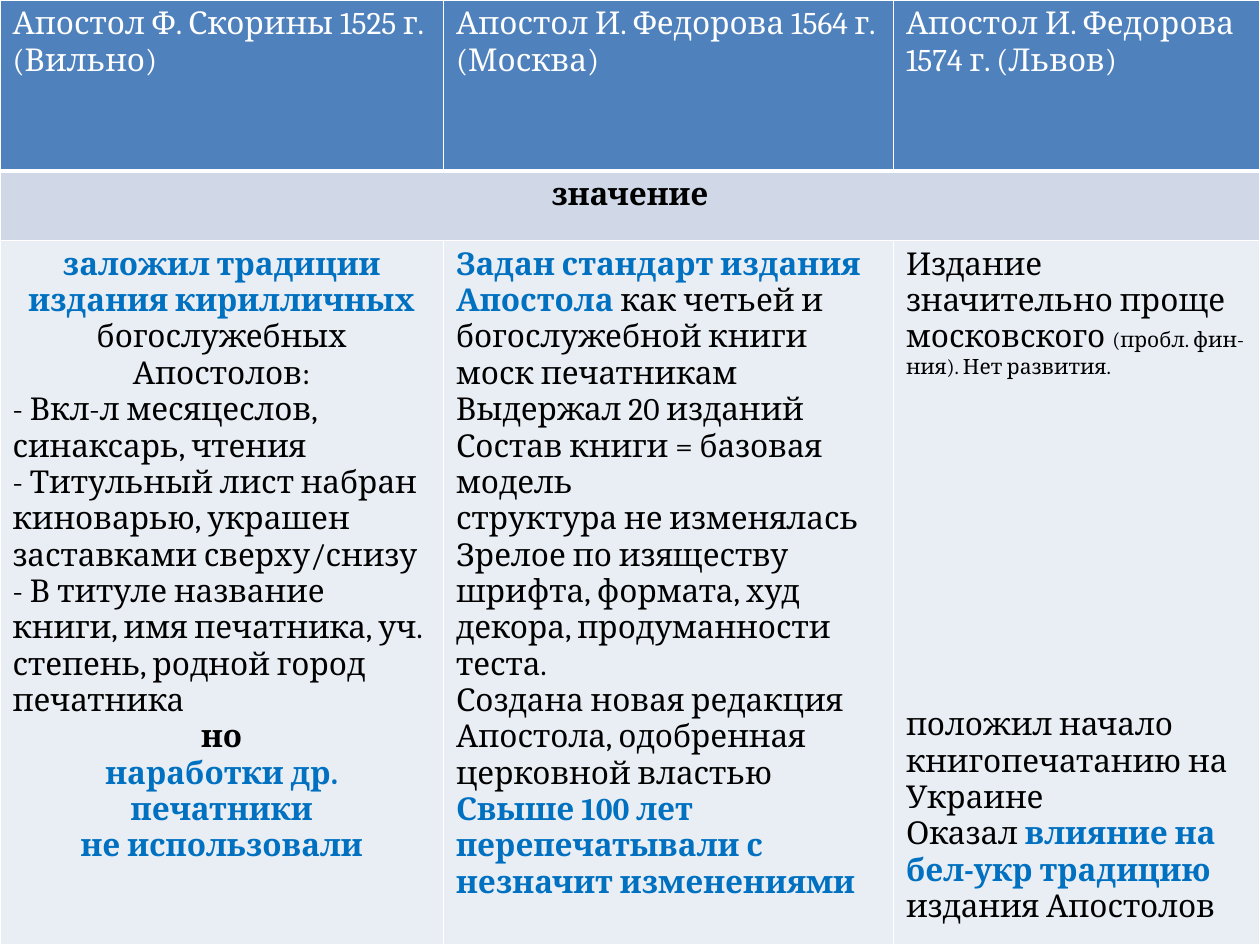
from lxml.etree import SubElement
from pptx import Presentation
from pptx.dml.color import RGBColor
from pptx.enum.text import PP_ALIGN
from pptx.oxml.ns import qn
from pptx.util import Cm, Pt

WHITE = RGBColor(0xFF, 0xFF, 0xFF)
BLACK = RGBColor(0x00, 0x00, 0x00)
ACCENT = RGBColor(0x00, 0x70, 0xC0)
HEADER_FILL = RGBColor(0x4F, 0x81, 0xBD)
SECTION_FILL = RGBColor(0xD0, 0xD8, 0xE8)
BODY_FILL = RGBColor(0xE9, 0xED, 0xF4)

CENTER = PP_ALIGN.CENTER
STRONG = {"color": ACCENT, "bold": True}


def add_span(paragraph, text, size=18, color=BLACK, bold=False):
    span = paragraph.add_run()
    span.text = text
    span.font.name = "Cambria"
    span.font.size = Pt(size)
    span.font.color.rgb = color
    span.font.bold = bold


def style_cell(cell, fill, bottom=1):
    properties = cell._tc.get_or_add_tcPr()
    for side, width in (("L", 1), ("R", 1), ("T", 1), ("B", bottom)):
        line = SubElement(properties, qn(f"a:ln{side}"), w=str(Pt(width)))
        solid = SubElement(line, qn("a:solidFill"))
        SubElement(solid, qn("a:srgbClr"), val=str(WHITE))
    cell.fill.solid()
    cell.fill.fore_color.rgb = fill


deck = Presentation()
deck.slide_width, deck.slide_height = Cm(25.4), Cm(19.05)
page = deck.slides.add_slide(deck.slide_layouts[6])

# Table grid
column_widths = (8.94, 9.07, 7.39)
row_heights = (3.45, 1.4, 14.2)
table = page.shapes.add_table(3, 3, 0, 0, deck.slide_width, deck.slide_height).table
for column, width in zip(table.columns, column_widths):
    column.width = Cm(width)
for row, height in zip(table.rows, row_heights):
    row.height = Cm(height)

# Fills and borders
for row, fill, bottom in zip(table.rows, (HEADER_FILL, SECTION_FILL, BODY_FILL), (3, 1, 1)):
    for cell in row.cells:
        style_cell(cell, fill, bottom)

# Header row
headings = (
    "Апостол Ф. Скорины 1525 г. (Вильно)",
    "Апостол И. Федорова 1564 г. (Москва)",
    "Апостол И. Федорова 1574 г. (Львов)",
)
for cell, heading in zip(table.rows[0].cells, headings):
    add_span(cell.text_frame.paragraphs[0], heading, color=WHITE)

# Section row across all columns
section = table.cell(1, 0)
section.merge(table.cell(1, 2))
section_title = section.text_frame.paragraphs[0]
section_title.alignment = CENTER
add_span(section_title, "значение", bold=True)

# Body row: each paragraph is (alignment, points before, spans)
vilno = [
    (CENTER, 0, [("заложил традиции издания кирилличных ", STRONG),
                 ("богослужебных Апостолов:", {})]),
    (None, 0, [("- Вкл-л месяцеслов, синаксарь, чтения", {})]),
    (None, 0, [("- Титульный лист набран киноварью, украшен заставками сверху/снизу", {})]),
    (None, 0, [("- В титуле название книги, имя печатника, уч. степень, "
                "родной город печатника", {})]),
    (CENTER, 0, [("но", {"bold": True})]),
    (CENTER, 0, [("наработки др. печатники", STRONG)]),
    (CENTER, 0, [("не использовали", STRONG)]),
]
moscow = [
    (None, 0, [("Задан стандарт издания Апостола", STRONG),
               (" как четьей и богослужебной книги моск печатникам", {})]),
    (None, 0, [("Выдержал 20 изданий", {})]),
    (None, 0, [("Состав книги = базовая модель", {})]),
    (None, 0, [("структура не изменялась", {})]),
    (None, 0, [("Зрелое по изяществу шрифта, формата, худ декора, продуманности теста.", {})]),
    (None, 0, [("Создана новая редакция Апостола, одобренная церковной властью", {})]),
    (None, 0, [("Свыше 100 лет перепечатывали с незначит изменениями", STRONG)]),
]
lvov = [
    (None, 0, [("Издание значительно проще московского ", {}),
               ("(пробл. фин-ния). Нет развития.", {"size": 12})]),
    (None, 187, [("положил начало книгопечатанию на Украине", {})]),
    (None, 0, [("Оказал ", {}),
               ("влияние на бел-укр традицию ", STRONG),
               ("издания Апостолов", {})]),
]
for cell, content in zip(table.rows[2].cells, (vilno, moscow, lvov)):
    frame = cell.text_frame
    for index, (alignment, before, spans) in enumerate(content):
        paragraph = frame.add_paragraph() if index else frame.paragraphs[0]
        paragraph.alignment = alignment
        if before:
            paragraph.space_before = Pt(before)
        for text, style in spans:
            add_span(paragraph, text, **style)

deck.save("out.pptx")
